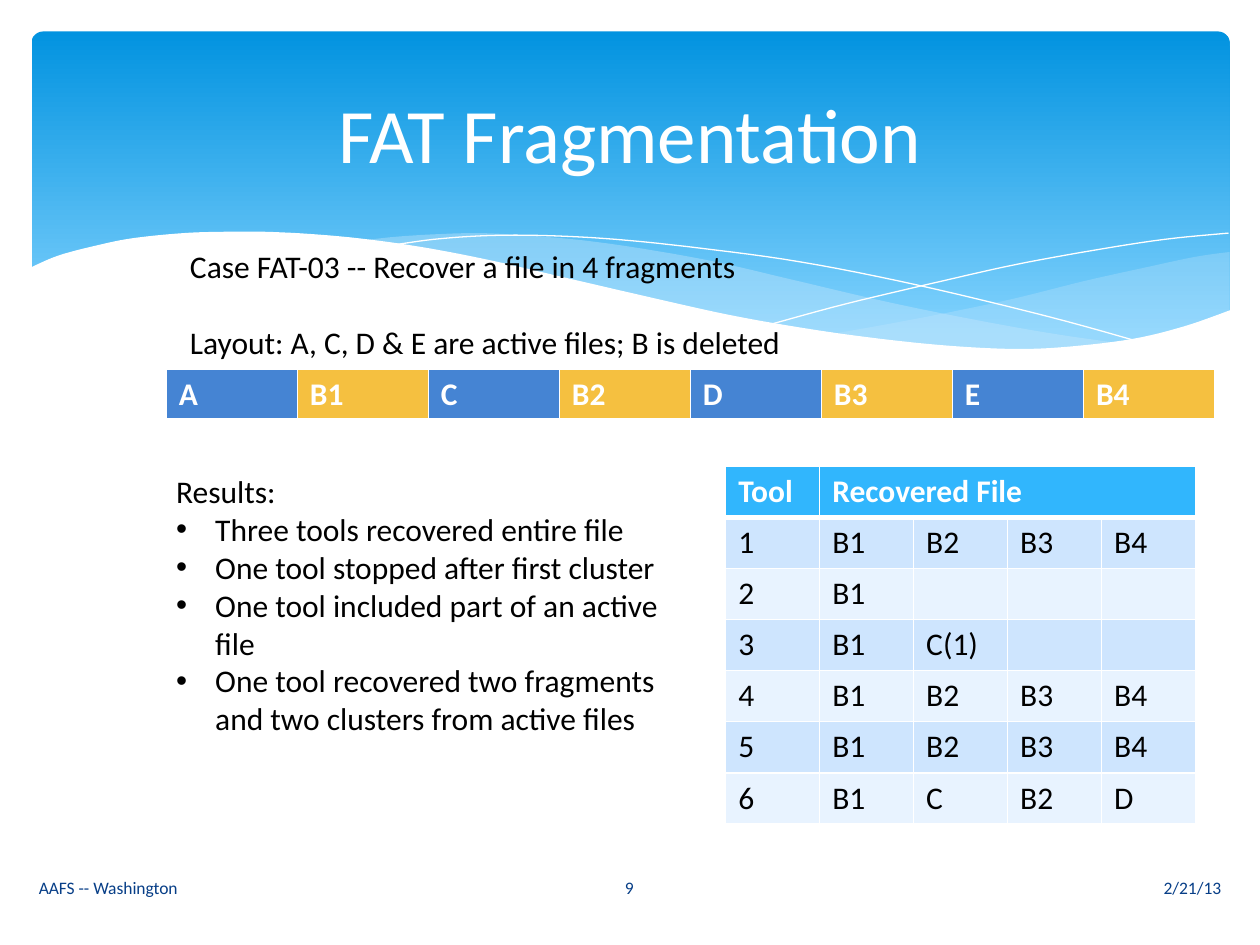
import pptx
import pptx.dml.color
import pptx.enum.shapes
import pptx.enum.text
import pptx.oxml
import pptx.oxml.ns
import pptx.oxml.xmlchemy
import pptx.util
from pptx.util import Inches, Pt

RGBColor = pptx.dml.color.RGBColor
ALIGN = pptx.enum.text.PP_ALIGN
ANCHOR = pptx.enum.text.MSO_ANCHOR

WHITE = RGBColor(0xFF, 0xFF, 0xFF)
BLACK = RGBColor(0, 0, 0)
NAVY = RGBColor(0x07, 0x3E, 0x87)
SKY_DARK = RGBColor(0x02, 0x93, 0xE0)
SKY_LIGHT = RGBColor(0x83, 0xD3, 0xFE)
WAVE_BLUE = RGBColor(0xC6, 0xE7, 0xFC)
ACTIVE_BLUE = RGBColor(0x45, 0x84, 0xD3)
DELETED_YELLOW = RGBColor(0xF5, 0xC0, 0x40)
HEADER_BLUE = RGBColor(0x31, 0xB6, 0xFD)
BANDS = [RGBColor(0xCE, 0xE5, 0xFE), RGBColor(0xE8, 0xF3, 0xFF)]
FONT = "Calibri"

TITLE = "FAT Fragmentation"
CASE = ["Case FAT-03 -- Recover a file in 4 fragments",
        "Layout: A, C, D & E are active files; B is deleted"]
RESULTS = ["Results:",
           "Three tools recovered entire file",
           "One tool stopped after first cluster",
           "One tool included part of an active file",
           "One tool recovered two fragments and two clusters from active files"]
CLUSTERS = ["A", "B1", "C", "B2", "D", "B3", "E", "B4"]
RECOVERED = [["Tool", "Recovered File", "", "", ""],
             ["1", "B1", "B2", "B3", "B4"],
             ["2", "B1", "", "", ""],
             ["3", "B1", "C(1)", "", ""],
             ["4", "B1", "B2", "B3", "B4"],
             ["5", "B1", "B2", "B3", "B4"],
             ["6", "B1", "C", "B2", "D"]]
FOOTER = [("2/21/13", 5.65, 4.14, ALIGN.RIGHT),
          ("AAFS -- Washington", 0.21, 4.14, ALIGN.LEFT),
          ("9", 4.36, 1.27, ALIGN.CENTER)]

# Each wave is a list of smooth edges, joined by straight lines:
# (edges, fill colour or None for an open white line, opacity in percent)
WAVES = [
    ([[(9.76, 2), (9.48, 2.04), (9.06, 2.13), (8.61, 2.23), (8.05, 2.37), (7.53, 2.48),
       (7.06, 2.57), (6.61, 2.65)],
      [(6.61, 2.65), (7.05, 2.71), (7.45, 2.75), (7.81, 2.77), (8.14, 2.78), (8.54, 2.76),
       (8.89, 2.72), (9.21, 2.65), (9.49, 2.57), (9.76, 2.47)]], WAVE_BLUE, 29),
    ([[(8.93, 2.73), (8.37, 2.65), (7.75, 2.54), (7.06, 2.4), (6.29, 2.22), (5.69, 2.08),
       (5.14, 1.98), (4.65, 1.91), (4.2, 1.87), (3.8, 1.85), (3.44, 1.86), (3.13, 1.88),
       (2.86, 1.91)],
      [(2.86, 1.91), (3.42, 1.99), (4.04, 2.11), (4.49, 2.22), (5.3, 2.4), (6.01, 2.55),
       (6.65, 2.66), (7.22, 2.74), (7.73, 2.77), (8.18, 2.78), (8.57, 2.77),
       (8.93, 2.73)]], WAVE_BLUE, 40),
    ([[(3.09, 1.95), (3.44, 1.9), (3.87, 1.87), (4.33, 1.87), (4.89, 1.9), (5.56, 1.97),
       (6.36, 2.08), (7.27, 2.26), (8.31, 2.51), (9.07, 2.72)]], None, 100),
    ([[(6.13, 2.57), (6.72, 2.41), (7.48, 2.23), (8.06, 2.1), (8.66, 1.99), (9.24, 1.9),
       (9.75, 1.85)]], None, 100),
    ([[(9.77, 2.46), (9.4, 2.59), (8.99, 2.69), (8.5, 2.75), (8.09, 2.77), (7.61, 2.75),
       (7.08, 2.7), (6.48, 2.62), (5.79, 2.5), (5.03, 2.33), (4.47, 2.2), (3.91, 2.07),
       (3.4, 1.97), (2.92, 1.9), (2.5, 1.86), (2.11, 1.84), (1.77, 1.84), (1.46, 1.85),
       (1.06, 1.89), (0.76, 1.95), (0.46, 2.03), (0.23, 2.13)],
      [(0.23, 3.29), (9.77, 3.29)]], WHITE, 100),
]


def smooth(points, steps=6):
    """Return points along a Catmull-Rom curve through the given points."""
    padded = [points[0], *points, points[-1]]
    curve = [points[0]]
    for a, b, c, d in zip(padded, padded[1:], padded[2:], padded[3:]):
        for step in range(1, steps + 1):
            t = step / steps
            curve.append(tuple(
                0.5 * (2 * q + (r - p) * t + (2 * p - 5 * q + 4 * r - s) * t ** 2
                       + (3 * q - p - 3 * r + s) * t ** 3)
                for p, q, r, s in zip(a, b, c, d)))
    return curve


def add_wave(slide, edges, color, opacity):
    points = [(Inches(x), Inches(y)) for edge in edges for x, y in smooth(edge)]
    builder = slide.shapes.build_freeform(*points[0])
    builder.add_line_segments(points[1:], close=color is not None)
    shape = builder.convert_to_shape()
    shape.shadow.inherit = False
    if color is None:
        shape.fill.background()
        shape.line.color.rgb = WHITE
        shape.line.width = Pt(0)
        return
    shape.line.fill.background()
    shape.fill.solid()
    shape.fill.fore_color.rgb = color
    if opacity < 100:
        fill_color = shape.fill._xPr.find(".//" + pptx.oxml.ns.qn("a:srgbClr"))
        alpha = pptx.oxml.xmlchemy.OxmlElement("a:alpha")
        alpha.set("val", str(opacity * 1000))
        fill_color.append(alpha)


def add_banner(slide):
    banner = slide.shapes.add_shape(pptx.enum.shapes.MSO_SHAPE.ROUNDED_RECTANGLE,
                                    Inches(0.25), Inches(0.25), Inches(9.51), Inches(2.7))
    banner.adjustments[0] = 0.034
    banner.shadow.inherit = False
    banner.line.fill.background()
    banner.fill.gradient()
    banner.fill.gradient_angle = 270
    for stop, color, position in zip(banner.fill.gradient_stops, (SKY_DARK, SKY_LIGHT), (0, 0.9)):
        stop.color.rgb = color
        stop.position = position


def format_paragraph(paragraph, size, color, bold=False):
    for run in paragraph.runs:
        run.font.name = FONT
        run.font.size = Pt(size)
        run.font.bold = bold
        run.font.color.rgb = color


def add_text(slide, lines, box, size, color, align=ALIGN.LEFT, anchor=ANCHOR.TOP):
    text_frame = slide.shapes.add_textbox(*map(Inches, box)).text_frame
    text_frame.word_wrap = True
    text_frame.vertical_anchor = anchor
    text_frame.text = "\n".join(lines)
    for paragraph in text_frame.paragraphs:
        paragraph.alignment = align
        format_paragraph(paragraph, size, color)
    return text_frame.paragraphs


def add_bullet(paragraph, indent=0.31):
    properties = paragraph._p.get_or_add_pPr()
    properties.set("marL", str(Inches(indent)))
    properties.set("indent", str(-Inches(indent)))
    for tag, name, value in (("a:buFont", "typeface", "Arial"), ("a:buChar", "char", "•")):
        bullet = pptx.oxml.xmlchemy.OxmlElement(tag)
        bullet.set(name, value)
        properties.append(bullet)


def set_borders(cell, bottom):
    properties = cell._tc.get_or_add_tcPr()
    for index, (side, width) in enumerate(zip("LRTB", (1, 1, 1, bottom))):
        properties.insert(index, pptx.oxml.parse_xml(
            f'<a:ln{side} {pptx.oxml.ns.nsdecls("a")} w="{int(Pt(width))}"><a:solidFill>'
            f'<a:srgbClr val="{WHITE}"/></a:solidFill></a:ln{side}>'))


def add_grid(slide, rows, box, fill_for):
    """Add a table whose first row is a bold white header."""
    table = slide.shapes.add_table(len(rows), len(rows[0]), *map(Inches, box)).table
    table.horz_banding = False
    for r, row in enumerate(rows):
        for c, text in enumerate(row):
            cell = table.cell(r, c)
            cell.text_frame.text = text
            format_paragraph(cell.text_frame.paragraphs[0], 18,
                             BLACK if r else WHITE, bold=r == 0)
            cell.fill.solid()
            cell.fill.fore_color.rgb = fill_for(r, c)
            set_borders(cell, bottom=1 if r else 3)
    return table


def main():
    presentation = pptx.Presentation()
    presentation.slide_width, presentation.slide_height = Inches(10), Inches(7.5)
    slide = presentation.slides.add_slide(presentation.slide_layouts[6])

    add_banner(slide)
    for wave in WAVES:
        add_wave(slide, *wave)

    add_grid(slide, [CLUSTERS], (1.32, 2.93, 8.32, 0.41),
             lambda r, c: DELETED_YELLOW if CLUSTERS[c].startswith("B") else ACTIVE_BLUE)
    for text, left, width, align in FOOTER:
        add_text(slide, [text], (left, 6.84, width, 0.4), 10, NAVY, align, ANCHOR.MIDDLE)
    add_text(slide, [TITLE], (0.5, 0.37, 9, 1.37), 44, WHITE, ALIGN.CENTER, ANCHOR.MIDDLE)
    case_lines = add_text(slide, CASE, (1.41, 1.91, 6.63, 1.01), 18, BLACK)
    case_lines[1].space_before = Pt(22)

    recovered = add_grid(slide, RECOVERED, (5.76, 3.7, 3.73, 2.84),
                         lambda r, c: BANDS[(r - 1) % 2] if r else HEADER_BLUE)
    recovered.cell(0, 1).merge(recovered.cell(0, 4))
    for paragraph in add_text(slide, RESULTS, (1.3, 3.7, 4.04, 2.83), 18, BLACK)[1:]:
        add_bullet(paragraph)

    presentation.save("out.pptx")


if __name__ == "__main__":
    main()
